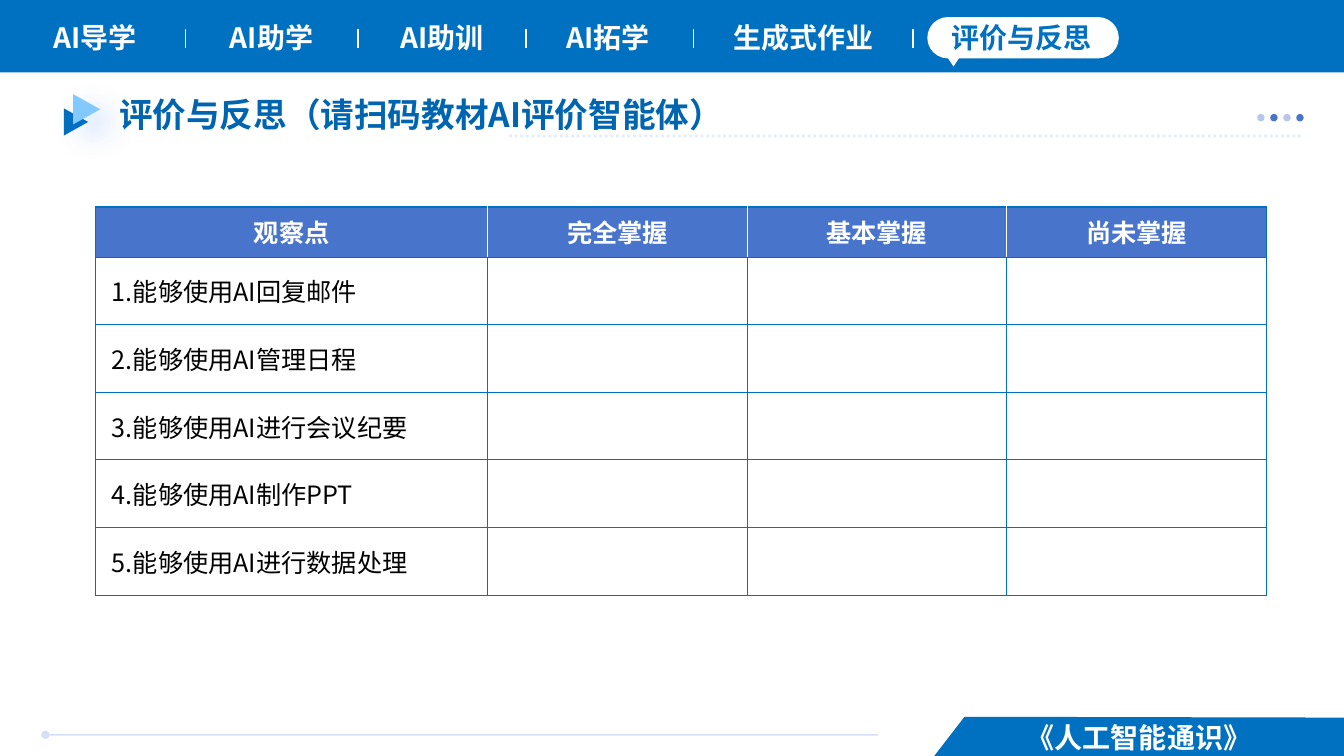
from dataclasses import dataclass

from lxml.etree import SubElement
from pptx import Presentation
from pptx.dml.color import RGBColor
from pptx.enum.dml import MSO_LINE
from pptx.enum.shapes import MSO_CONNECTOR, MSO_SHAPE
from pptx.enum.text import MSO_ANCHOR as Anchor, MSO_AUTO_SIZE, PP_ALIGN as Align
from pptx.oxml.ns import qn
from pptx.util import Pt


@dataclass(frozen=True)
class Theme:
    font: str = "Noto Sans CJK SC"
    blue: str = "0070C0"
    title_blue: str = "0065B0"
    header: str = "4874CB"
    sky: str = "81C9FF"
    pale: str = "B6C7EA"
    rule: str = "3D70DA"
    dots: str = "B9D2F9"
    glow: str = "1469FF"
    white: str = "FFFFFF"
    black: str = "000000"
    title_size: float = 24
    nav_size: float = 20
    table_size: float = 18


@dataclass(frozen=True)
class Box:
    left: float
    top: float
    width: float
    height: float

    @property
    def lengths(self) -> tuple:
        return Pt(self.left), Pt(self.top), Pt(self.width), Pt(self.height)


@dataclass(frozen=True)
class Label:
    text: str
    box: Box
    color: str


@dataclass(frozen=True)
class Figure:
    kind: MSO_SHAPE
    box: Box
    color: str
    rotation: float = 0


@dataclass(frozen=True)
class Line:
    start: tuple
    end: tuple
    color: str
    width: float = 1
    opacity: int = 100
    dash: MSO_LINE | None = None
    dot_at_start: bool = False


THEME = Theme()
NAV_TOP, NAV_HEIGHT = 10.8, 31.7
NAV_ITEMS = [
    Label(text, Box(left, NAV_TOP, width, NAV_HEIGHT), color)
    for text, left, width, color in [
        ("AI导学", 12.2, 111.6, THEME.white),
        ("AI助学", 132.5, 123, THEME.white),
        ("AI助训", 260, 111.6, THEME.white),
        ("AI拓学", 379.4, 110, THEME.white),
        ("生成式作业", 499, 150, THEME.white),
        ("评价与反思", 663, 133.2, THEME.blue),
    ]
]
COURSE = Label("《人工智能通识》", Box(667.4, 511.2, 292.4, 31.7), THEME.white)
FIGURES = [
    Figure(MSO_SHAPE.RECTANGLE, Box(0, 0, 960, 51.8), THEME.blue),
    Figure(MSO_SHAPE.FLOWCHART_EXTRACT, Box(44.6, 78.5, 19.4, 17.3), THEME.blue, 90),
    Figure(MSO_SHAPE.ROUNDED_RECTANGLE, Box(662.4, 12.2, 136.8, 29.5), THEME.white),
    Figure(MSO_SHAPE.FLOWCHART_MERGE, Box(676.8, 41, 8.6, 6.5), THEME.white),
] + [
    Figure(MSO_SHAPE.OVAL, Box(898 + 9.3 * i, 81.4, 5.3, 5.3), color)
    for i, color in enumerate([THEME.pale, THEME.header] * 2)
]
ARROW = Figure(MSO_SHAPE.FLOWCHART_EXTRACT, Box(51.1, 68.4, 21.6, 19.4), THEME.sky, 90)
LINES = [
    Line((32.4, 524.9), (627.1, 524.9), THEME.rule, opacity=22, dot_at_start=True),
    Line((363.6, 97.2), (931, 97.2), THEME.dots, 2, 40, MSO_LINE.ROUND_DOT),
] + [Line((x, 20.9), (x, 34.6), THEME.white) for x in (132.5, 255.6, 375.8, 495.4, 652.3)]
HEADINGS = ["观察点", "完全掌握", "基本掌握", "尚未掌握"]
CRITERIA = ["1.能够使用AI回复邮件", "2.能够使用AI管理日程", "3.能够使用AI进行会议纪要",
            "4.能够使用AI制作PPT", "5.能够使用AI进行数据处理"]
COLUMN_WIDTHS = [280, 185.3, 185.3, 185.6]
HEADER_HEIGHT, ROW_HEIGHT = 36, 48.3


def rgb(color: str) -> RGBColor:
    return RGBColor.from_string(color)


def write(frame, text: str, size: float, color: str, bold: bool, align: Align) -> None:
    frame.text = text
    paragraph = frame.paragraphs[0]
    paragraph.alignment = align
    font = paragraph.font
    font.name, font.size, font.bold = THEME.font, Pt(size), bold
    font.color.rgb = rgb(color)
    properties = paragraph._p.pPr.find(qn("a:defRPr"))
    SubElement(properties, qn("a:ea"), typeface=THEME.font)


def add_label(slide, label: Label) -> None:
    frame = slide.shapes.add_textbox(*label.box.lengths).text_frame
    frame.word_wrap = True
    write(frame, label.text, THEME.nav_size, label.color, True, Align.CENTER)


def paint(shape, color: str) -> None:
    shape.shadow.inherit = False
    shape.fill.solid()
    shape.fill.fore_color.rgb = rgb(color)
    shape.line.fill.background()


def add_figure(slide, figure: Figure):
    shape = slide.shapes.add_shape(figure.kind, *figure.box.lengths)
    paint(shape, figure.color)
    shape.rotation = figure.rotation
    if figure.kind == MSO_SHAPE.ROUNDED_RECTANGLE:
        shape.adjustments[0] = 0.5
    return shape


def add_glow(shape) -> None:
    """Cast a soft coloured shadow to the lower right."""
    effects = shape._element.spPr.find(qn("a:effectLst"))
    shadow = SubElement(effects, qn("a:outerShdw"), blurRad=str(Pt(22)), dist=str(Pt(12)),
                        dir="2700000", algn="ctr", rotWithShape="0")
    color = SubElement(shadow, qn("a:srgbClr"), val=THEME.glow)
    SubElement(color, qn("a:alpha"), val="30000")


def add_line(slide, line: Line) -> None:
    ends = [Pt(value) for value in (*line.start, *line.end)]
    connector = slide.shapes.add_connector(MSO_CONNECTOR.STRAIGHT, *ends)
    connector.line.color.rgb = rgb(line.color)
    connector.line.width = Pt(line.width)
    if line.dash:
        connector.line.dash_style = line.dash
    properties = connector._element.spPr
    outline = properties.find(qn("a:ln"))
    if line.opacity < 100:
        color = outline.find(".//" + qn("a:srgbClr"))
        SubElement(color, qn("a:alpha"), val=str(line.opacity * 1000))
    if line.dot_at_start:
        SubElement(outline, qn("a:headEnd"), type="oval")
    SubElement(properties, qn("a:effectLst"))


def add_footer_tab(slide) -> None:
    builder = slide.shapes.build_freeform(Pt(689), Pt(512))
    corners = [(960, 512.6), (960, 540), (667.4, 540)]
    builder.add_line_segments([(Pt(x), Pt(y)) for x, y in corners])
    paint(builder.convert_to_shape(), THEME.blue)


def set_borders(cell, row: int, column: int) -> None:
    inner_header = THEME.white if row == 0 else THEME.blue
    borders = {
        "a:lnL": (inner_header if column > 0 else THEME.blue, 0.5),
        "a:lnR": (inner_header if column < len(HEADINGS) - 1 else THEME.blue, 0.5),
        "a:lnT": (THEME.blue, 1.5 if row == 0 else 0.5),
        "a:lnB": (THEME.blue, 0.5),
    }
    properties = cell._tc.get_or_add_tcPr()
    for position, (tag, (color, width)) in enumerate(borders.items()):
        border = SubElement(properties, qn(tag), w=str(Pt(width)))
        SubElement(SubElement(border, qn("a:solidFill")), qn("a:srgbClr"), val=color)
        properties.insert(position, border)


def add_rating_table(slide) -> None:
    rows = [HEADINGS] + [[text, "", "", ""] for text in CRITERIA]
    heights = [HEADER_HEIGHT] + [ROW_HEIGHT] * len(CRITERIA)
    box = Box(68.4, 147.6, sum(COLUMN_WIDTHS), sum(heights))
    table = slide.shapes.add_table(len(rows), len(HEADINGS), *box.lengths).table
    table.horz_banding = False
    for column, width in zip(table.columns, COLUMN_WIDTHS):
        column.width = Pt(width)
    for r, (texts, height) in enumerate(zip(rows, heights)):
        table.rows[r].height = Pt(height)
        for c, text in enumerate(texts):
            cell = table.cell(r, c)
            cell.margin_left = cell.margin_right = Pt(5)
            cell.margin_top = cell.margin_bottom = 0
            cell.vertical_anchor = Anchor.MIDDLE
            if r == 0:
                cell.fill.solid()
                cell.fill.fore_color.rgb = rgb(THEME.header)
                write(cell.text_frame, text, THEME.table_size, THEME.white, True, Align.CENTER)
            else:
                cell.fill.background()
                write(cell.text_frame, text, THEME.table_size, THEME.black, False, Align.JUSTIFY)
                cell.text_frame.paragraphs[0]._p.pPr.set("marL", str(Pt(6.5)))
            set_borders(cell, r, c)


def format_title(slide) -> None:
    title = slide.shapes.title
    title.left, title.top, title.width, title.height = Box(77.8, 67, 597.6, 51.8).lengths
    frame = title.text_frame
    write(frame, "评价与反思（请扫码教材AI评价智能体）", THEME.title_size, THEME.title_blue, True, Align.LEFT)
    frame.paragraphs[0].line_spacing = 0.9
    frame.vertical_anchor = Anchor.TOP
    frame.auto_size = MSO_AUTO_SIZE.NONE


def main() -> None:
    presentation = Presentation()
    presentation.slide_width, presentation.slide_height = Pt(960), Pt(540)
    slide = presentation.slides.add_slide(presentation.slide_layouts[5])
    format_title(slide)
    add_footer_tab(slide)
    for figure in FIGURES:
        add_figure(slide, figure)
    add_glow(add_figure(slide, ARROW))
    for line in LINES:
        add_line(slide, line)
    for label in [*NAV_ITEMS, COURSE]:
        add_label(slide, label)
    add_rating_table(slide)
    presentation.save("out.pptx")


if __name__ == "__main__":
    main()
